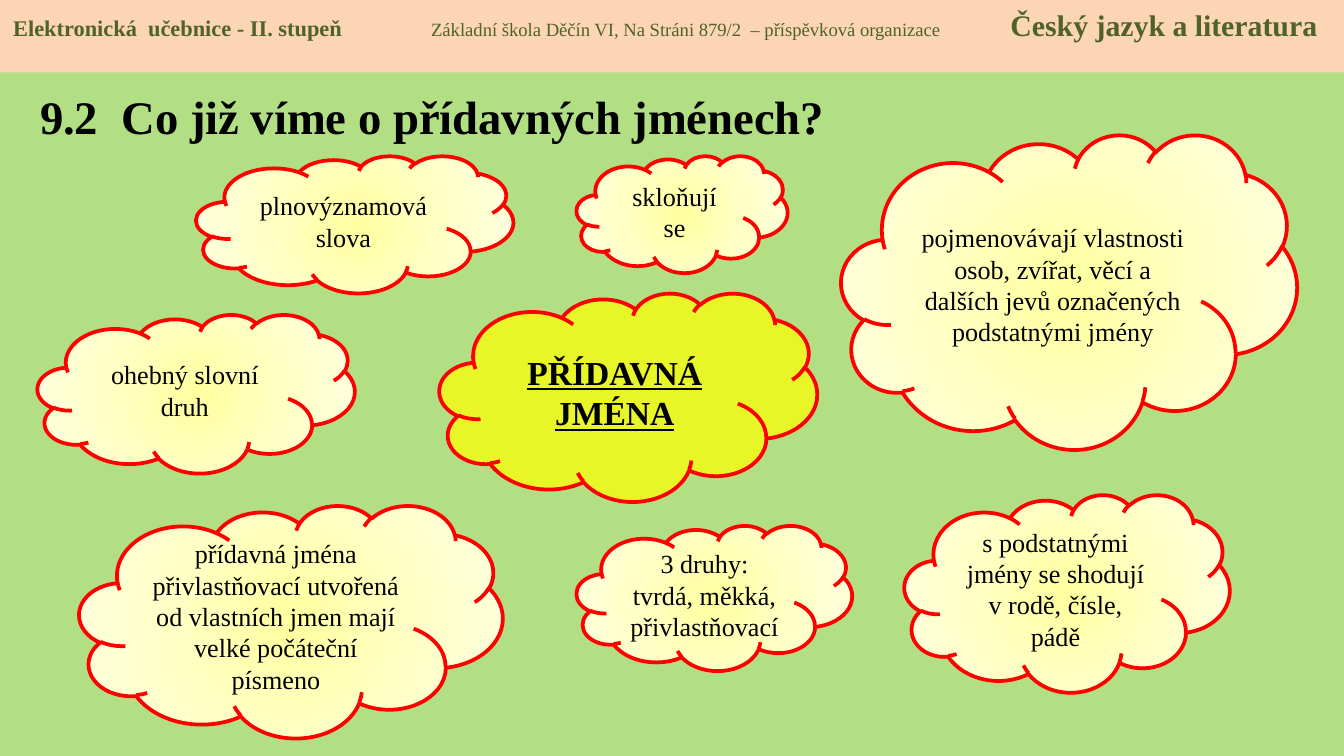
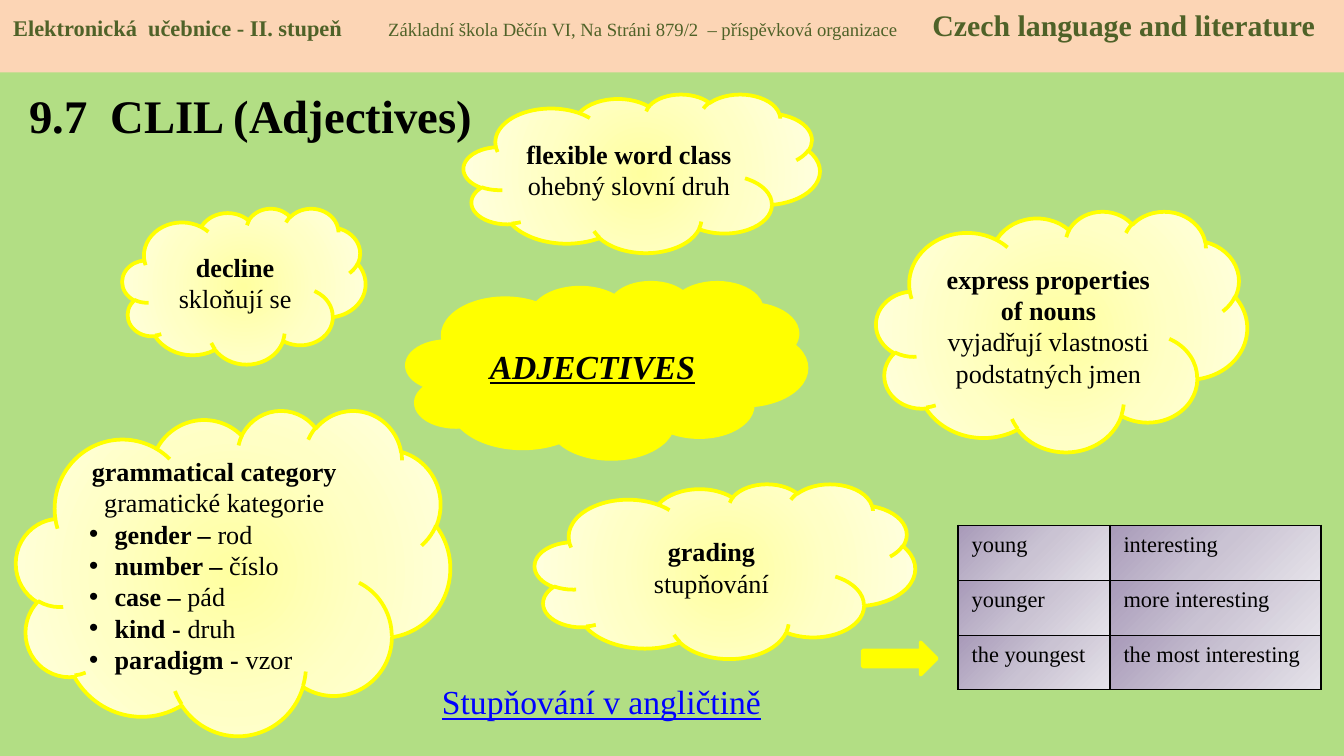
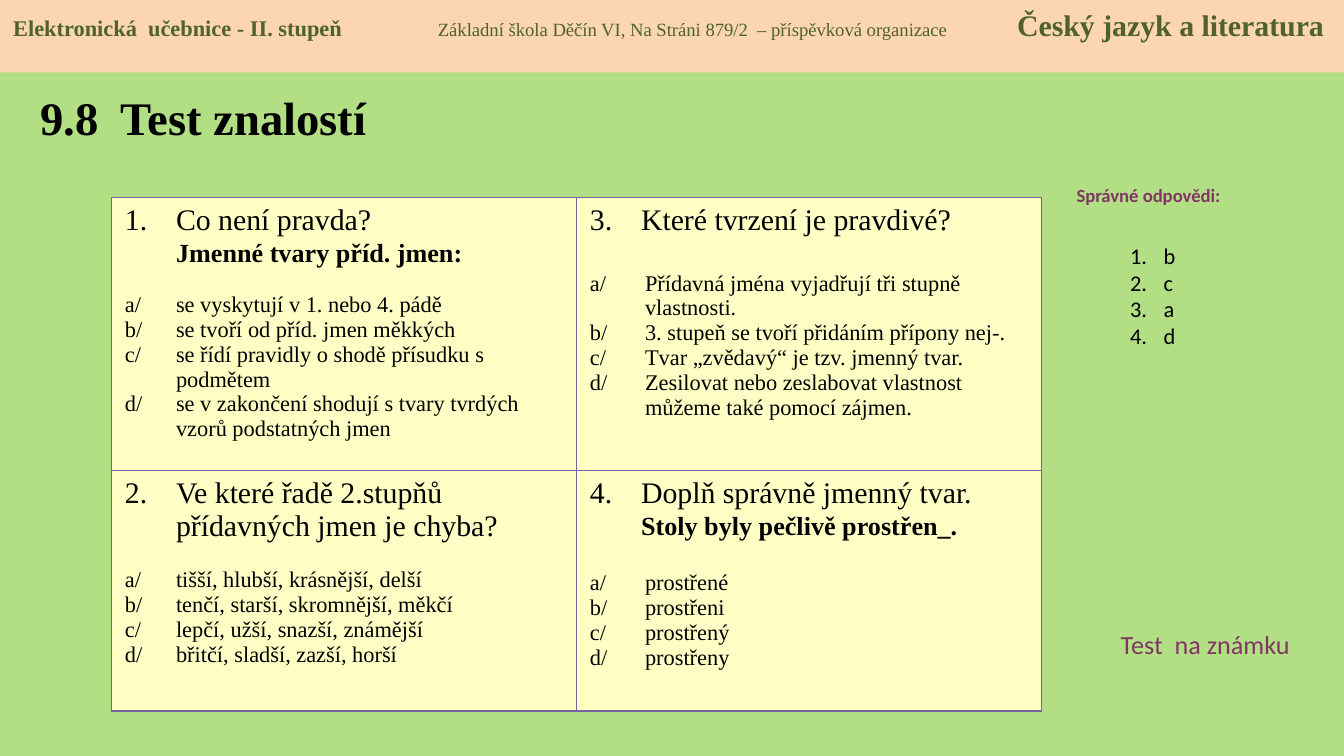
import dataclasses
import lxml.etree
import pptx
import pptx.dml.color
import pptx.enum.shapes
import pptx.enum.text
import pptx.oxml.ns
import pptx.util

Inches = pptx.util.Inches
Pt = pptx.util.Pt
RGB = pptx.dml.color.RGBColor.from_string
Shapes = pptx.enum.shapes.MSO_SHAPE
Align = pptx.enum.text.PP_ALIGN
Anchor = pptx.enum.text.MSO_ANCHOR
qn = pptx.oxml.ns.qn


@dataclasses.dataclass(frozen=True)
class Theme:
    serif: str = "Times New Roman"
    sans: str = "Calibri"
    ink: str = "000000"
    meadow: str = "B2DE84"
    band: str = "FCD5B5"
    olive: str = "4F6228"
    plum: str = "813763"
    link: str = "0000FF"
    red: str = "FF0000"
    yellow: str = "FFFF00"
    lime: str = "E8F527"
    violet: str = "7D60A0"
    paper: str = "FFFFC5"
    cream: tuple = ("FFFFA0", "FFFFC5", "FFFFE3")
    lilac: tuple = ("A89AB9", "CAC3D3", "E5E2E9")
    title: int = 25
    topic: int = 18
    subject: int = 16
    body: int = 14
    detail: int = 12
    small: int = 10


theme = Theme()


@dataclasses.dataclass
class Line:
    text: object
    size: int = theme.body
    bold: bool = False
    italic: bool = False
    underline: bool = False
    color: str = theme.ink
    face: str = theme.serif
    align: object = Align.LEFT
    margin: float = 0
    hang: float = 0
    bullet: str = ""
    start: int = 0
    before: float = 0
    tabs: tuple = ()


def write(frame, lines, anchor=Anchor.TOP, wrap=True):
    frame.word_wrap = wrap
    frame.vertical_anchor = anchor
    for index, line in enumerate(lines):
        para = frame.paragraphs[0] if index == 0 else frame.add_paragraph()
        para.alignment = line.align
        if line.before:
            para.space_before = Pt(line.before)
        props = para._p.get_or_add_pPr()
        if line.margin:
            props.set("marL", str(Inches(line.margin)))
            props.set("indent", str(-Inches(line.hang)))
        if line.bullet:
            lxml.etree.SubElement(props, qn("a:buFont"), typeface="Arial")
            lxml.etree.SubElement(props, qn("a:buChar"), char=line.bullet)
        if line.start:
            lxml.etree.SubElement(props, qn("a:buAutoNum"), type="arabicPeriod", startAt=str(line.start))
        if line.tabs:
            stops = lxml.etree.SubElement(props, qn("a:tabLst"))
            for stop in line.tabs:
                lxml.etree.SubElement(stops, qn("a:tab"), pos=str(Inches(stop)), algn="l")
        para.font.name = line.face
        para.font.color.rgb = RGB(line.color)
        if isinstance(line.text, str):
            para.text = line.text
            para.font.size = Pt(line.size)
            para.font.bold = line.bold
            para.font.italic = line.italic
            para.font.underline = line.underline
        else:
            for text, size, bold in line.text:
                span = para.add_run()
                span.text = text
                span.font.size = Pt(size)
                span.font.bold = bold


def blend(fill, props, colors, angle=None):
    fill.gradient()
    gradient = props.find(qn("a:gradFill"))
    for child in list(gradient):
        gradient.remove(child)
    stops = lxml.etree.SubElement(gradient, qn("a:gsLst"))
    for index, color in enumerate(colors):
        stop = lxml.etree.SubElement(stops, qn("a:gs"), pos=str(index * 50000))
        lxml.etree.SubElement(stop, qn("a:srgbClr"), val=color)
    if angle is None:
        focus = lxml.etree.SubElement(gradient, qn("a:path"), path="circle")
        lxml.etree.SubElement(focus, qn("a:fillToRect"), l="50000", t="50000", r="50000", b="50000")
    else:
        lxml.etree.SubElement(gradient, qn("a:lin"), ang=str(angle * 60000), scaled="0")


deck = pptx.Presentation()
deck.slide_width = Inches(10)
deck.slide_height = deck.slide_width * 9 // 16

czech = "Český jazyk a literatura"
english = "Czech language and literature"
lessons = [
    ("9.2  Co již víme o přídavných jménech?", (0.2, 0.54, 6.54, 0.65), czech, (3.11, 7.42)),
    ("9.7  CLIL (Adjectives)", (0.12, 0.53, 5.51, 0.65), english, (2.79, 6.84)),
    ("9.8  Test znalostí", (0.2, 0.58, 3.31, 0.58), czech, (3.16, 7.47)),
]
pages = []
for title, place, subject, tabs in lessons:
    page = deck.slides.add_slide(deck.slide_layouts[6])
    pages.append(page)
    page.background.fill.solid()
    page.background.fill.fore_color.rgb = RGB(theme.meadow)
    box = page.shapes.add_textbox(*map(Inches, place))
    write(box.text_frame, [Line(title, theme.title, bold=True)], Anchor.MIDDLE)
    band = page.shapes.add_shape(Shapes.RECTANGLE, 0, 0, deck.slide_width, Inches(0.54))
    band.shadow.inherit = False
    band.fill.solid()
    band.fill.fore_color.rgb = RGB(theme.band)
    band.line.fill.background()
    heading = [
        ("Elektronická  učebnice - II. stupeň\t", theme.detail, True),
        ("Základní škola Děčín VI, Na Stráni 879/2  – příspěvková organizace\t", theme.small, False),
        (subject, theme.subject, True),
    ]
    write(band.text_frame, [Line(heading, color=theme.olive, tabs=tabs)])

facts, clil, test = pages

center = Align.CENTER
fact_clouds = [
    ((0.28, 2.34, 2.36, 1.18), "ohebný slovní druh"),
    ((0.59, 3.76, 3.15, 1.73), "přídavná jména přivlastňovací utvořená od vlastních jmen mají velké počáteční písmeno"),
    ((6.73, 3.68, 2.42, 1.47), "s podstatnými jmény se shodují v rodě, čísle, pádě"),
    ((1.46, 1.16, 2.36, 1.02), "plnovýznamová slova"),
    ((4.29, 1.16, 1.57, 0.87), "skloňují se"),
    ((4.29, 3.91, 2.05, 1.08), "3 druhy: tvrdá, měkká, přivlastňovací"),
    ((6.26, 1, 3.39, 2.34), "pojmenovávají vlastnosti osob, zvířat, věcí a dalších jevů označených podstatnými jmény"),
]
grammar = "grammatical category "
term_clouds = [
    ((0.12, 3.05, 3.23, 2.42), grammar, "gramatické kategorie "),
    ((6.52, 1.57, 2.76, 1.79), "express properties of nouns", "vyjadřují vlastnosti podstatných jmen"),
    ((0.91, 1.55, 1.81, 1.16), "decline", "skloňují se"),
    ((3.45, 0.7, 2.65, 1.18), "flexible word class", "ohebný slovní druh"),
    ((3.98, 3.6, 2.83, 1.3), "grading", "stupňování"),
]
categories = [("gender – ", "rod"), ("number – ", "číslo"), ("case – ", "pád"), ("kind - ", "druh"), ("paradigm - ", "vzor")]

clouds = [
    (facts, (3.27, 2.18, 2.81, 1.55), theme.lime, theme.red,
     [Line("PŘÍDAVNÁ JMÉNA", theme.topic, bold=True, underline=True, align=center)]),
    (clil, (3.03, 2.1, 2.97, 1.31), theme.yellow, theme.yellow,
     [Line("ADJECTIVES", theme.topic, bold=True, italic=True, underline=True, align=center)]),
]
for place, text in fact_clouds:
    clouds.append((facts, place, None, theme.red, [Line(text, align=center)]))
for place, term, meaning in term_clouds:
    lines = [Line(term, bold=True, align=center), Line(meaning, align=center)]
    if term == grammar:
        for name, translation in categories:
            spans = [(name, theme.body, True), (translation, theme.body, False)]
            lines.append(Line(spans, margin=0.19, hang=0.19, bullet="•"))
    clouds.append((clil, place, None, theme.yellow, lines))

for page, place, color, outline, lines in clouds:
    cloud = page.shapes.add_shape(Shapes.CLOUD, *map(Inches, place))
    cloud.shadow.inherit = False
    if color:
        cloud.fill.solid()
        cloud.fill.fore_color.rgb = RGB(color)
    else:
        blend(cloud.fill, cloud._element.spPr, theme.cream)
    cloud.line.color.rgb = RGB(outline)
    cloud.line.width = Pt(2)
    write(cloud.text_frame, lines, Anchor.MIDDLE)

arrow = clil.shapes.add_shape(Shapes.RIGHT_ARROW, *map(Inches, (6.42, 4.78, 0.55, 0.24)))
arrow.shadow.inherit = False
arrow.fill.solid()
arrow.fill.fore_color.rgb = RGB(theme.yellow)
arrow.line.color.rgb = RGB(theme.yellow)
arrow.line.width = Pt(2)

box = clil.shapes.add_textbox(*map(Inches, (3.19, 5.02, 2.58, 0.4)))
write(box.text_frame, [Line("Stupňování v angličtině", theme.topic, underline=True, color=theme.link)], wrap=False)

degrees = [("young", "interesting"), ("younger", "more interesting"), ("the youngest", "the most interesting")]
degree_cells = [[[Line(word, theme.detail)] for word in row] for row in degrees]

questions = [
    [
        ("Co není pravda?", "Jmenné tvary příd. jmen:", 13, 0.38,
         ["se vyskytují v 1. nebo 4. pádě", "se tvoří od příd. jmen měkkých",
          "se řídí pravidly o shodě přísudku s podmětem",
          "se v zakončení shodují s tvary tvrdých vzorů podstatných jmen"]),
        ("Které tvrzení je pravdivé?", "", 18, 0.41,
         ["Přídavná jména vyjadřují tři stupně\nvlastnosti.",
          "3. stupeň se tvoří přidáním přípony nej-.",
          "Tvar „zvědavý“ je tzv. jmenný tvar.",
          "Zesilovat nebo zeslabovat vlastnost \vmůžeme také pomocí zájmen."]),
    ],
    [
        ("Ve které řadě 2.stupňů přídavných jmen je chyba?", "", 13, 0.38,
         ["tišší, hlubší, krásnější, delší", "tenčí, starší, skromnější, měkčí",
          "lepčí, užší, snazší, známější", "břitčí, sladší, zazší, horší"]),
        ("Doplň správně jmenný tvar.", "Stoly byly pečlivě prostřen_.", 16, 0.41,
         ["prostřené", "prostřeni", "prostřený", "prostřeny"]),
    ],
]
question_cells = []
for row_index, row in enumerate(questions):
    cells = []
    for column_index, (question, prompt, gap, hang, options) in enumerate(row):
        number = 1 + row_index + 2 * column_index
        lines = [Line(question, theme.subject, margin=0.38, hang=0.38, start=number)]
        if prompt:
            lines.append(Line(prompt, bold=True, margin=0.38, before=1))
        for letter, option in zip("abcd", options):
            before = gap if letter == "a" else 0
            first, *rest = option.split("\n")
            lines.append(Line(f"{letter}/\t{first}", theme.detail, margin=hang, hang=hang, before=before))
            lines.extend(Line(text, theme.detail, margin=hang) for text in rest)
        cells.append(lines)
    question_cells.append(cells)

tables = [
    (clil, (7.13, 3.91), (1.13, 1.57), (0.41, 0.41, 0.4), degree_cells, theme.lilac, theme.ink, 1),
    (test, (0.83, 1.47), (3.46, 3.46), (2.03, 1.79), question_cells, None, theme.violet, 0.75),
]
for page, corner, widths, heights, rows, colors, border, weight in tables:
    size = (sum(widths), sum(heights))
    table = page.shapes.add_table(len(heights), len(widths), *map(Inches, corner + size)).table
    table.first_row = False
    table.horz_banding = False
    for column, width in zip(table.columns, widths):
        column.width = Inches(width)
    for row, height in zip(table.rows, heights):
        row.height = Inches(height)
    for row, contents in zip(table.rows, rows):
        for cell, lines in zip(row.cells, contents):
            write(cell.text_frame, lines)
            props = cell._tc.get_or_add_tcPr()
            if colors:
                blend(cell.fill, props, colors, 45)
            else:
                cell.fill.solid()
                cell.fill.fore_color.rgb = RGB(theme.paper)
            for index, side in enumerate(("a:lnL", "a:lnR", "a:lnT", "a:lnB")):
                edge = lxml.etree.Element(qn(side), w=str(Pt(weight)))
                paint = lxml.etree.SubElement(edge, qn("a:solidFill"))
                lxml.etree.SubElement(paint, qn("a:srgbClr"), val=border)
                props.insert(index, edge)

answers = [Line(letter, theme.detail, face=theme.sans, margin=0.25, hang=0.25, start=1) for letter in "bcad"]
notes = [
    ((7.76, 1.32, 1.57, 0.27),
     [Line("Správné odpovědi:", theme.small, bold=True, color=theme.plum, face=theme.sans, align=center)]),
    ((8.31, 1.75, 0.55, 1.11), answers),
    ((8.24, 4.63, 1.57, 0.34), [Line("Test  na známku", color=theme.plum, face=theme.sans)]),
]
for place, lines in notes:
    box = test.shapes.add_textbox(*map(Inches, place))
    write(box.text_frame, lines)

deck.save("out.pptx")
